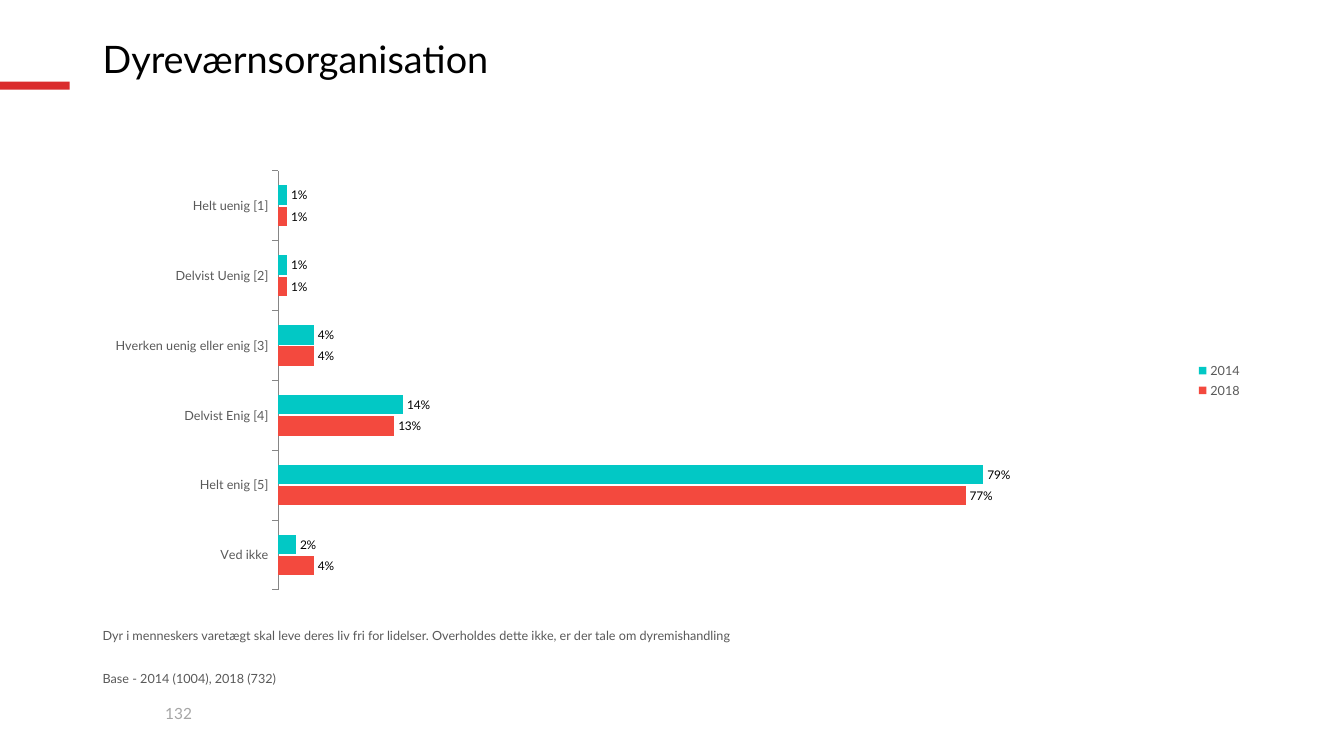
from lxml import etree
from pptx import Presentation
from pptx import util as u
from pptx.chart.data import CategoryChartData
from pptx.dml.color import RGBColor
from pptx.enum import chart as ch, shapes, text

FONT = "Lato"
BLACK = RGBColor(0x00, 0x00, 0x00)
GREY = RGBColor(0x59, 0x59, 0x59)
PALE = RGBColor(0xA6, 0xA6, 0xA6)
AXIS = RGBColor(0x86, 0x86, 0x86)
ACCENT = RGBColor(0xDA, 0x2C, 0x2D)
RED = RGBColor(0xF3, 0x49, 0x3E)
TEAL = RGBColor(0x02, 0xC8, 0xC5)

TITLE = "Dyreværnsorganisation"
QUESTION = ("Dyr i menneskers varetægt skal leve deres liv fri for lidelser. "
            "Overholdes dette ikke, er der tale om dyremishandling")
BASE = "Base - 2014 (1004), 2018 (732)"
PAGE = "132"
ANSWERS = ["Ved ikke", "Helt enig [5]", "Delvist Enig [4]",
           "Hverken uenig eller enig [3]", "Delvist Uenig [2]", "Helt uenig [1]"]
SERIES = [
    ("2018", RED, (0.04, 0.77, 0.13, 0.04, 0.01, 0.01)),
    ("2014", TEAL, (0.02, 0.79, 0.14, 0.04, 0.01, 0.01)),
]
PLOT = {"x": 0.16, "y": 0.02, "w": 0.77, "h": 0.96}
LEFT, WIDTH = 0.92, 11.5


def box(*values):
    return [u.Inches(v) for v in values]


def style(font, size, color):
    font.name, font.size = FONT, u.Pt(size)
    font.color.rgb = color


def add_text(s, content, *, at, size=9, color=GREY,
             anchor=text.MSO_ANCHOR.TOP, spacing=None):
    tf = s.shapes.add_textbox(*box(*at)).text_frame
    tf.word_wrap = True
    tf.vertical_anchor = anchor
    p = tf.paragraphs[0]
    p.line_spacing = spacing
    r = p.add_run()
    r.text = content
    style(r.font, size, color)


def place_plot(chart):
    plot_area = chart.plots[0]._element.getparent()
    ns = "{%s}" % etree.QName(plot_area).namespace
    layout = plot_area.find(ns + "layout")
    if layout is None:
        layout = etree.Element(ns + "layout")
        plot_area.insert(0, layout)
    manual = etree.SubElement(layout, ns + "manualLayout")
    settings = {"layoutTarget": "inner", "xMode": "edge", "yMode": "edge", **PLOT}
    for tag, value in settings.items():
        etree.SubElement(manual, ns + tag).set("val", str(value))


def add_bars(s):
    data = CategoryChartData(number_format="0%")
    data.categories = ANSWERS
    for name, _, values in SERIES:
        data.add_series(name, values)
    chart = s.shapes.add_chart(ch.XL_CHART_TYPE.BAR_CLUSTERED,
                               *box(LEFT, 1.61, WIDTH, 4.33), data).chart
    style(chart.font, 18, BLACK)
    chart.has_title = False
    chart.has_legend = True
    chart.legend.position = ch.XL_LEGEND_POSITION.RIGHT
    chart.legend.include_in_layout = False
    style(chart.legend.font, 9, GREY)

    cat = chart.category_axis
    cat.has_major_gridlines = False
    cat.major_tick_mark = ch.XL_TICK_MARK.OUTSIDE
    cat.tick_label_position = ch.XL_TICK_LABEL_POSITION.LOW
    cat.format.line.color.rgb = AXIS
    cat.format.line.width = u.Pt(0.75)
    style(cat.tick_labels.font, 9, GREY)

    val = chart.value_axis
    val.minimum_scale, val.maximum_scale, val.major_unit = 0, 1, 0.1
    val.has_major_gridlines = False
    val.visible = False

    plot = chart.plots[0]
    plot.gap_width, plot.overlap = 150, -10
    plot.vary_by_categories = False
    for series, (_, color, _) in zip(plot.series, SERIES):
        series.format.fill.solid()
        series.format.fill.fore_color.rgb = color
        labels = series.data_labels
        labels.show_value = True
        labels.number_format = "0%"
        labels.number_format_is_linked = False
        labels.position = ch.XL_LABEL_POSITION.OUTSIDE_END
        style(labels.font, 8.5, BLACK)
    place_plot(chart)


def main():
    prs = Presentation()
    prs.slide_width, prs.slide_height = box(13.33, 7.5)
    s = prs.slides.add_slide(prs.slide_layouts[6])

    sp = s.shapes.add_shape(shapes.MSO_SHAPE.RECTANGLE, *box(0, 0.81, 0.69, 0.08))
    sp.shadow.inherit = False
    sp.fill.solid()
    sp.fill.fore_color.rgb = ACCENT
    sp.line.fill.background()

    add_text(s, PAGE, at=(1.54, 6.94, 0.68, 0.29), size=11, color=PALE)
    add_text(s, TITLE, at=(LEFT, 0.35, WIDTH, 0.51), size=27, color=BLACK,
             anchor=text.MSO_ANCHOR.MIDDLE, spacing=0.9)
    add_text(s, QUESTION, at=(LEFT, 6.18, WIDTH, 0.43))
    add_bars(s)
    add_text(s, BASE, at=(LEFT, 6.61, WIDTH, 0.28))
    prs.save("out.pptx")


if __name__ == "__main__":
    main()
